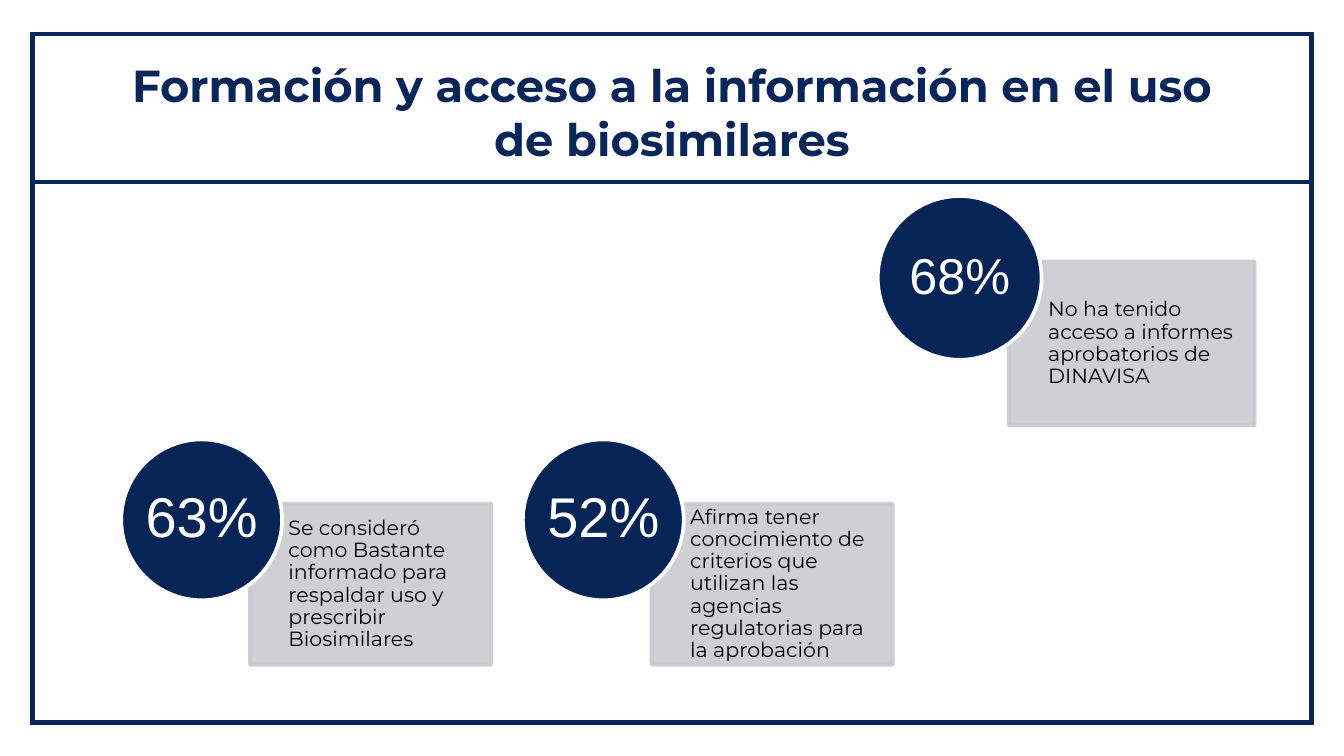
from lxml import etree
from pptx import Presentation
from pptx.dml.color import RGBColor
from pptx.enum import shapes, text
from pptx.oxml import ns
from pptx.util import Pt

NAVY, CIRCLE, GREY, WHITE, BLACK = "0A2557", "072457", "CACBD0", "FFFFFF", "000000"
LEFT, CENTER = text.PP_ALIGN.LEFT, text.PP_ALIGN.CENTER
TOP, MIDDLE = text.MSO_ANCHOR.TOP, text.MSO_ANCHOR.MIDDLE


def rgb(value):
    return RGBColor.from_string(value)


def add_preset(parent, kind, box, fill, line, weight):
    sp = parent.add_shape(kind, *map(Pt, box))
    sp.shadow.inherit = False
    sp.fill.solid()
    sp.fill.fore_color.rgb = rgb(fill)
    sp.line.color.rgb = rgb(line)
    sp.line.width = Pt(weight)
    return sp


def set_alpha(sp, percent):
    """Make the fill and the line of a shape partly transparent."""
    for color in sp._element.spPr.iter(ns.qn("a:srgbClr")):
        etree.SubElement(color, ns.qn("a:alpha"), val=str(percent * 1000))


def add_text(parent, box, words, font, size, color, align=LEFT, anchor=MIDDLE,
             insets=(0, 0, 0, 0), spacing=0.9, bold=False):
    tf = parent.add_textbox(*map(Pt, box)).text_frame
    tf.word_wrap = True
    tf.vertical_anchor = anchor
    tf.margin_left, tf.margin_top, tf.margin_right, tf.margin_bottom = map(Pt, insets)
    p = tf.paragraphs[0]
    p.text = words
    p.alignment = align
    p.line_spacing = spacing
    p.font.name, p.font.size, p.font.bold = font, Pt(size), bold
    p.font.color.rgb = rgb(color)


def add_frame(s, box):
    """Place the border, the title and the rule below the title."""
    x, y, w, h = box
    frame = add_preset(s.shapes, shapes.MSO_SHAPE.FRAME, box, NAVY, NAVY, 0.75)
    frame.adjustments[0] = 0.005
    add_text(s.shapes, (x + 39.5, y + 6.5, w - 79, 67.7),
             "Formación y acceso a la información en el uso de biosimilares",
             "Montserrat", 24, NAVY, CENTER, TOP, (7.2,) * 4, 1, True)
    rule_y = y + 80
    rule = s.shapes.add_connector(shapes.MSO_CONNECTOR.STRAIGHT,
                                  Pt(x), Pt(rule_y), Pt(x + w), Pt(rule_y))
    rule.line.color.rgb = rgb(NAVY)
    rule.line.width = Pt(2.25)
    etree.SubElement(rule._element.spPr, ns.qn("a:effectLst"))


def add_card(s, box, figure, size, words):
    """Place a circle in the box and a panel behind it, scaled to the circle."""
    x, y, d = box
    card = s.shapes.add_group_shape().shapes
    panel = add_preset(card, shapes.MSO_SHAPE.RECTANGLE,
                       (x + 0.8 * d, y + 0.4 * d, 1.5 * d, d), GREY, GREY, 2)
    set_alpha(panel, 89)
    add_text(card, (x + 1.04 * d, y + 0.4 * d, 1.26 * d, d), words,
             "Montserrat", 11, BLACK, insets=(0, 6, 6, 6))
    add_preset(card, shapes.MSO_SHAPE.OVAL, (x, y, d, d), CIRCLE, WHITE, 2)
    inset = 0.146 * d
    add_text(card, (x + inset, y + inset, d - 2 * inset, d - 2 * inset), figure,
             "Arial", size, WHITE, CENTER)


def main():
    prs = Presentation()
    prs.slide_width, prs.slide_height = Pt(720), Pt(405)
    s = prs.slides.add_slide(prs.slide_layouts[6])
    add_frame(s, (16.6, 17.3, 686.8, 370.8))
    cards = [
        ((470.2, 105, 87.8), "68%", 27,
         "No ha tenido acceso a informes aprobatorios de DINAVISA"),
        ((64.9, 235.4, 86.2), "63%", 30,
         "Se consideró como Bastante informado para respaldar uso y prescribir "
         "Biosimilares"),
        ((280.1, 235.4, 86.2), "52%", 30,
         "Afirma tener conocimiento de criterios que utilizan las agencias "
         "regulatorias para la aprobación"),
    ]
    for card in cards:
        add_card(s, *card)
    prs.save("out.pptx")


if __name__ == "__main__":
    main()
